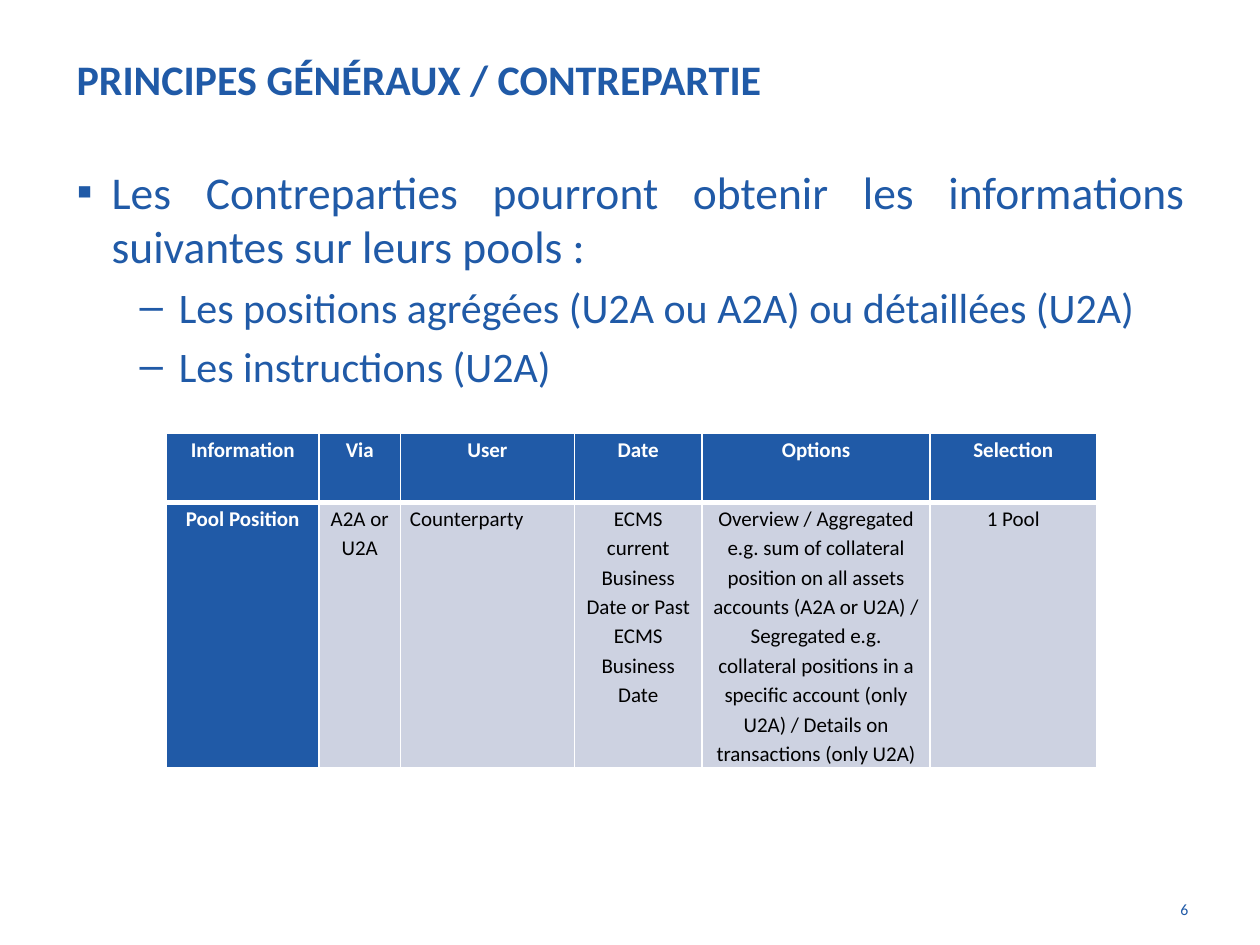
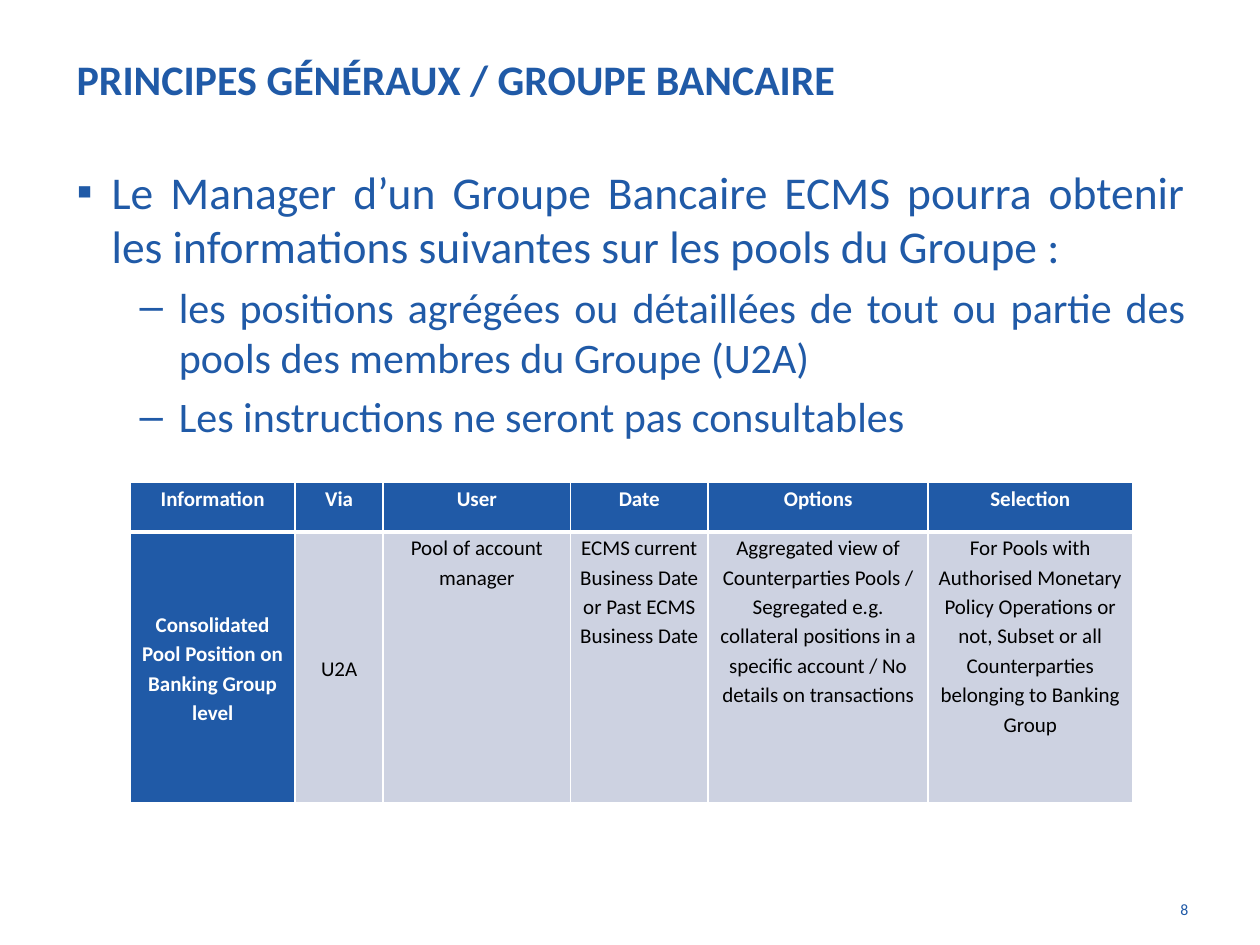
from lxml import etree
from pptx import Presentation
from pptx.dml.color import RGBColor
from pptx.enum.text import MSO_ANCHOR, PP_ALIGN
from pptx.oxml.ns import qn
from pptx.util import Pt

BLUE = RGBColor(0x20, 0x5A, 0xA7)
PALE = RGBColor(0xCD, 0xD2, 0xE1)
WHITE = RGBColor(0xFF, 0xFF, 0xFF)
BLACK = RGBColor(0x00, 0x00, 0x00)
FONT = "Calibri"
LEFT, CENTER = PP_ALIGN.LEFT, PP_ALIGN.CENTER
RIGHT, JUSTIFY = PP_ALIGN.RIGHT, PP_ALIGN.JUSTIFY
TOP, MIDDLE = MSO_ANCHOR.TOP, MSO_ANCHOR.MIDDLE

# Content
HEADINGS = ["Information", "Via", "User", "Date", "Options", "Selection"]
BUSINESS_DATE = "ECMS current Business Date or Past ECMS Business Date"
SLIDES = [
    {
        "title": "PRINCIPES GÉNÉRAUX / CONTREPARTIE",
        "number": "6",
        "bullets": [
            (0, "Les Contreparties pourront obtenir les informations suivantes "
                "sur leurs pools :"),
            (1, "Les positions agrégées (U2A ou A2A) ou détaillées (U2A)"),
            (1, "Les instructions (U2A)"),
        ],
        "row": [
            "Pool Position", "A2A or U2A", "Counterparty", BUSINESS_DATE,
            "Overview / Aggregated e.g. sum of collateral position on all assets "
            "accounts (A2A or U2A) / Segregated e.g. collateral positions in a "
            "specific account (only U2A) / Details on transactions (only U2A)",
            "1 Pool",
        ],
        "table_at": (95.2, 247.7),
        "columns": [87.1, 46.6, 99.4, 73, 130.3, 95],
        "heights": [39.5, 151.5],
        "middle_columns": [],
        "justified_columns": [2],
    },
    {
        "title": "PRINCIPES GÉNÉRAUX / GROUPE BANCAIRE",
        "number": "8",
        "bullets": [
            (0, "Le Manager d’un Groupe Bancaire ECMS pourra obtenir les "
                "informations suivantes sur les pools du Groupe :"),
            (1, "les positions agrégées ou détaillées de tout ou partie des pools "
                "des membres du Groupe (U2A)"),
            (1, "Les instructions ne seront pas consultables"),
        ],
        "row": [
            "Consolidated Pool Position on Banking Group level", "U2A",
            "Pool of account manager", BUSINESS_DATE,
            "Aggregated view of Counterparties Pools /\nSegregated e.g. collateral "
            "positions in a specific account / No details on transactions",
            "For Pools with Authorised Monetary Policy Operations or not, Subset "
            "or all Counterparties belonging to Banking Group",
        ],
        "table_at": (74.5, 275.8),
        "columns": [94.1, 50.4, 107, 78.7, 125.8, 116.6],
        "heights": [28.2, 155],
        "middle_columns": [0, 1],
        "justified_columns": [],
    },
]

# Bullet levels: character, text indent, hanging indent, size
LEVELS = [("▪", 20, 20, 26), ("–", 58.4, 22.4, 24)]


def add_run(paragraph, text, size, color=BLUE, bold=False):
    run = paragraph.add_run()
    run.text = text
    run.font.name = FONT
    run.font.size = Pt(size)
    run.font.bold = bold
    run.font.color.rgb = color


def add_text_box(slide, left, top, width, height, anchor=TOP):
    box = slide.shapes.add_textbox(Pt(left), Pt(top), Pt(width), Pt(height))
    frame = box.text_frame
    frame.word_wrap = True
    frame.vertical_anchor = anchor
    return frame


def set_bullet(paragraph, character, indent, hanging):
    properties = paragraph._p.get_or_add_pPr()
    properties.set("marL", str(Pt(indent)))
    properties.set("indent", str(-Pt(hanging)))
    etree.SubElement(properties, qn("a:buFont"), typeface="Arial")
    etree.SubElement(properties, qn("a:buChar"), char=character)


def add_bullets(slide, bullets):
    frame = add_text_box(slide, 36.7, 90, 648, 420)
    for index, (level, text) in enumerate(bullets):
        character, indent, hanging, size = LEVELS[level]
        paragraph = frame.add_paragraph() if index else frame.paragraphs[0]
        set_bullet(paragraph, character, indent, hanging)
        paragraph.level = level
        paragraph.alignment = JUSTIFY
        paragraph.space_before = Pt(size * 0.2 if index else 0)
        add_run(paragraph, text, size)


def set_borders(cell, widths):
    properties = cell._tc.get_or_add_tcPr()
    for position, (side, width) in enumerate(widths.items()):
        line = etree.Element(qn(f"a:ln{side}"), w=str(Pt(width)))
        fill = etree.SubElement(line, qn("a:solidFill"))
        etree.SubElement(fill, qn("a:srgbClr"), val=str(WHITE))
        properties.insert(position, line)


def fill_cell(cell, text, is_label, alignment, anchor):
    cell.fill.solid()
    cell.fill.fore_color.rgb = BLUE if is_label else PALE
    cell.margin_left = cell.margin_right = Pt(5.4)
    cell.margin_top = cell.margin_bottom = 0
    cell.vertical_anchor = anchor
    paragraph = cell.text_frame.paragraphs[0]
    paragraph.alignment = alignment
    paragraph.line_spacing = 1.15
    paragraph.space_after = Pt(8)
    for index, part in enumerate(text.split("\n")):
        if index:
            paragraph.add_line_break()
        add_run(paragraph, part, 12, WHITE if is_label else BLACK, is_label)


def add_information_table(slide, content):
    left, top = content["table_at"]
    columns, heights = content["columns"], content["heights"]
    table = slide.shapes.add_table(
        len(heights), len(columns), Pt(left), Pt(top),
        Pt(sum(columns)), Pt(sum(heights))).table
    table.first_row = table.horz_banding = False
    for column, width in zip(table.columns, columns):
        column.width = Pt(width)
    for row, height in zip(table.rows, heights):
        row.height = Pt(height)
    for row, texts in enumerate([HEADINGS, content["row"]]):
        for column, text in enumerate(texts):
            cell = table.cell(row, column)
            justified = row and column in content["justified_columns"]
            middle = row and column in content["middle_columns"]
            fill_cell(cell, text, row == 0 or column == 0,
                      JUSTIFY if justified else CENTER,
                      MIDDLE if middle else TOP)
            # The line between heading and data is the thick one
            set_borders(cell, {"L": 1, "R": 1, "T": 3 if row else 1,
                               "B": 1 if row else 3})


def add_slide(presentation, content):
    slide = presentation.slides.add_slide(presentation.slide_layouts[6])
    # Title
    title = add_text_box(slide, 36.7, 0, 648, 90, MIDDLE).paragraphs[0]
    title.alignment = LEFT
    add_run(title, content["title"], 24, bold=True)
    # Body
    add_bullets(slide, content["bullets"])
    add_information_table(slide, content)
    # Slide number
    number = add_text_box(slide, 643.7, 510.5, 42.5, 28).paragraphs[0]
    number.alignment = RIGHT
    add_run(number, content["number"], 9)


def main():
    presentation = Presentation()
    presentation.slide_width, presentation.slide_height = Pt(720), Pt(540)
    for content in SLIDES:
        add_slide(presentation, content)
    presentation.save("out.pptx")


if __name__ == "__main__":
    main()
